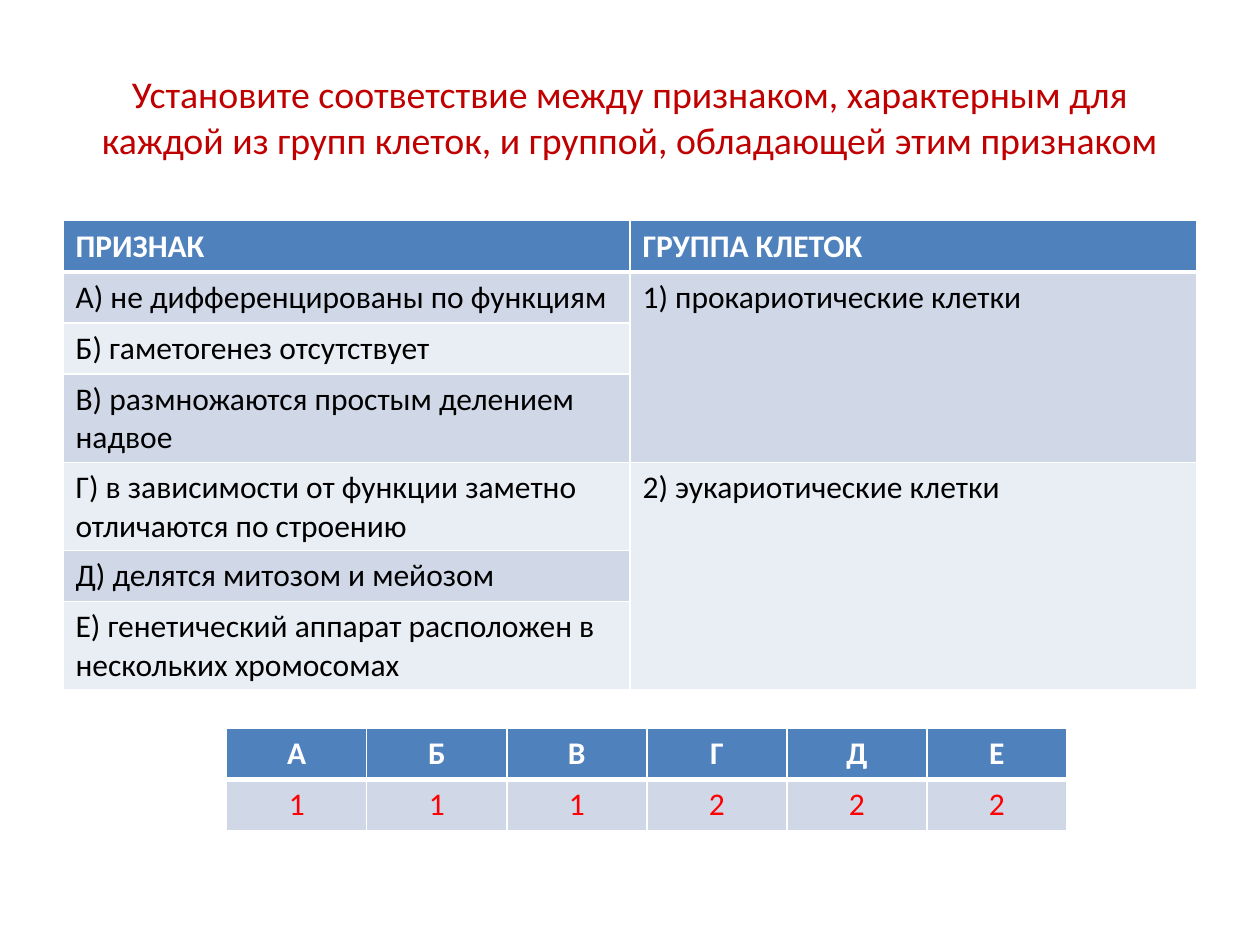
from lxml import etree
from pptx import Presentation
from pptx.dml.color import RGBColor
from pptx.enum.text import MSO_ANCHOR as Anchor, PP_ALIGN as Align
from pptx.oxml.ns import qn
from pptx.util import Cm, Pt


def write(frame, text, size, color, align, bold=False):
    para = frame.paragraphs[0]
    para.alignment = align
    span = para.add_run()
    span.text = text
    span.font.name = "Calibri"
    span.font.size = Pt(size)
    span.font.bold = bold
    span.font.color.rgb = RGBColor.from_string(color)


def paint(cell, fill, top, bottom):
    props = cell._tc.get_or_add_tcPr()
    for side, width in (("L", 1), ("R", 1), ("T", top), ("B", bottom)):
        line = etree.SubElement(props, qn(f"a:ln{side}"), w=str(Pt(width)))
        solid = etree.SubElement(line, qn("a:solidFill"))
        etree.SubElement(solid, qn("a:srgbClr"), val="FFFFFF")
    cell.fill.solid()
    cell.fill.fore_color.rgb = RGBColor.from_string(fill)


deck = Presentation()
deck.slide_width, deck.slide_height = Cm(25.4), Cm(19.05)
page = deck.slides.add_slide(deck.slide_layouts[6])

title = page.shapes.add_textbox(Cm(1.27), Cm(0.76), Cm(22.86), Cm(3.18)).text_frame
title.word_wrap = True
title.vertical_anchor = Anchor.MIDDLE
write(
    title,
    "Установите соответствие между признаком, характерным для каждой "
    "из групп клеток, и группой, обладающей этим признаком",
    21.6, "C00000", Align.CENTER,
)

features = [
    ["ПРИЗНАК", "ГРУППА КЛЕТОК"],
    ["А) не дифференцированы по функциям", "1) прокариотические клетки"],
    ["Б) гаметогенез отсутствует", ""],
    ["В) размножаются простым делением надвое", ""],
    ["Г) в зависимости от функции заметно отличаются по строению",
     "2) эукариотические клетки"],
    ["Д) делятся митозом и мейозом", ""],
    ["Е) генетический аппарат расположен в нескольких хромосомах", ""],
]
answers = ["АБВГДЕ", "111222"]

tables = [
    (features, 1.27, 4.45, 22.86, "000000", Align.LEFT),
    (answers, 4.57, 14.68, 16.94, "FF0000", Align.CENTER),
]
row_height = 1.03
for rows, left, top, width, body_color, align in tables:
    grid = page.shapes.add_table(
        len(rows), len(rows[0]), Cm(left), Cm(top), Cm(width), Cm(row_height * len(rows))
    ).table
    for r, texts in enumerate(rows):
        fill = "4F81BD" if r == 0 else ("E9EDF4", "D0D8E8")[r % 2]
        for c, text in enumerate(texts):
            cell = grid.cell(r, c)
            paint(cell, fill, 3 if r == 1 else 1, 3 if r == 0 else 1)
            if text:
                write(cell.text_frame, text, 18, "FFFFFF" if r == 0 else body_color,
                      align, r == 0)
    if rows is features:
        for first in (1, 4):
            grid.cell(first, 1).merge(grid.cell(first + 2, 1))

deck.save("out.pptx")
